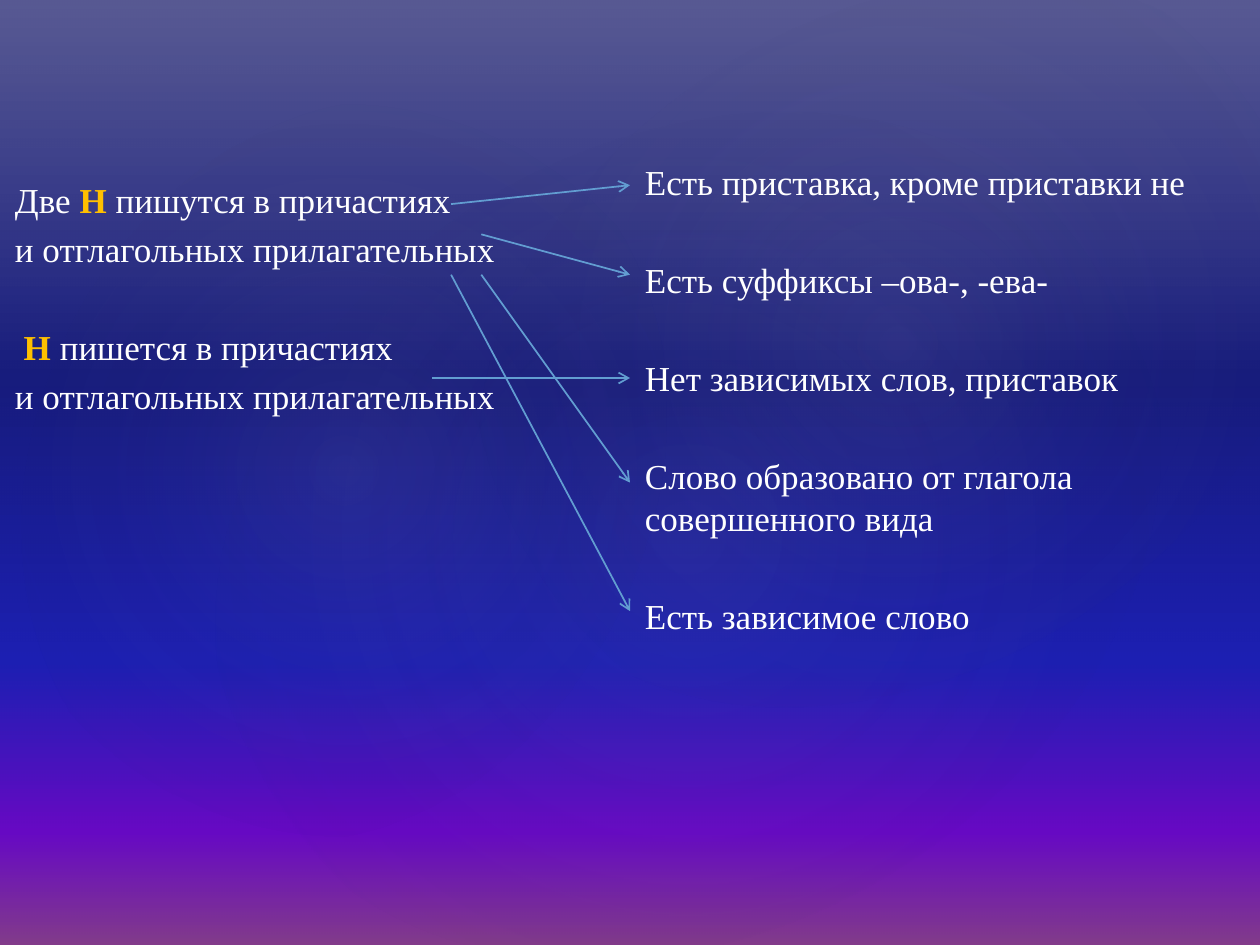
from dataclasses import dataclass
from typing import NamedTuple

import pptx
import pptx.dml.color
import pptx.enum.shapes
import pptx.enum.text
import pptx.oxml
import pptx.oxml.ns
import pptx.util
from pptx.util import Inches


@dataclass(frozen=True)
class Theme:
    font: str = "Times New Roman"
    size: int = 20
    near: int = 4
    far: int = 32
    text: str = "FFFFFF"
    mark: str = "FFC000"
    line: str = "629DD1"
    glow: str = "C4BCC6"
    deep: str = "242852"
    haze: str = "504652"


class Stop(NamedTuple):
    pos: int
    color: str
    alpha: int = 100


class Glow(NamedTuple):
    left: float
    top: float
    width: float
    height: float
    turn: float
    alpha: int


class Line(NamedTuple):
    text: str
    far: bool = False


class Block(NamedTuple):
    left: float
    top: float
    width: float
    height: float
    foot: float
    lines: list[Line]


class Arrow(NamedTuple):
    x: float
    y: float
    end: float


THEME = Theme()
TIP = 5
SKY = [Stop(0, "5C64B7"), Stop(40, "0A128C"), Stop(70, "181CC7"),
       Stop(88, "7005D4"), Stop(100, "8C3D91")]
VEIL = [Stop(0, THEME.haze, 36), Stop(100, THEME.deep, 10)]
GLOWS = [
    Glow(1.5, 1.14, 7.92, 6.24, 328.7, 7),
    Glow(-0.3, 1.28, 6.06, 4.9, 294.3, 8),
    Glow(3.58, 0.13, 7.09, 5.2, 328.7, 8),
]
BLOCKS = [
    Block(0, 0.6, 5.12, 4, 0.52, [
        Line("Две *Н *пишутся в причастиях"),
        Line("и отглагольных прилагательных"),
        Line(" *Н *пишется в причастиях", True),
        Line("и отглагольных прилагательных"),
    ]),
    Block(5, 0.76, 4.88, 4.81, 0.05, [
        Line("Есть приставка, кроме приставки не"),
        Line("Есть суффиксы –ова-, -ева-", True),
        Line("Нет зависимых слов, приставок", True),
        Line("Слово образовано от глагола совершенного вида", True),
        Line("Есть зависимое слово", True),
    ]),
]
ARROWS = [
    Arrow(3.58, 1.62, 1.47),
    Arrow(3.82, 1.86, 2.18),
    Arrow(3.82, 2.18, 3.83),
    Arrow(3.43, 3, 3),
    Arrow(3.58, 2.18, 4.85),
]


def rgb(code: str) -> pptx.dml.color.RGBColor:
    return pptx.dml.color.RGBColor.from_string(code)


def blend(owner, fill, stops: list[Stop], round: bool = False) -> None:
    fill.gradient()
    old = owner.xpath(".//a:gradFill")[0]
    marks = "".join(
        f'<a:gs pos="{s.pos * 1000}"><a:srgbClr val="{s.color}">'
        f'<a:alpha val="{s.alpha * 1000}"/></a:srgbClr></a:gs>'
        for s in stops)
    way = ('<a:path path="circle"><a:fillToRect l="50000" t="50000" '
           'r="50000" b="50000"/></a:path>'
           if round else '<a:lin ang="5400000" scaled="0"/>')
    new = pptx.oxml.parse_xml(
        f'<a:gradFill {pptx.oxml.ns.nsdecls("a")} rotWithShape="1">'
        f'<a:gsLst>{marks}</a:gsLst>{way}</a:gradFill>')
    old.getparent().replace(old, new)


def add_shade(slide, kind, box: tuple, stops: list[Stop],
              round: bool = False, turn: float = 0) -> None:
    shape = slide.shapes.add_shape(kind, *map(Inches, box))
    shape.shadow.inherit = False
    shape.line.fill.background()
    shape.rotation = turn
    blend(shape._element, shape.fill, stops, round)


def add_block(slide, block: Block) -> None:
    frame = slide.shapes.add_textbox(*map(Inches, block[:4])).text_frame
    frame.word_wrap = True
    frame.vertical_anchor = pptx.enum.text.MSO_ANCHOR.MIDDLE
    frame.margin_bottom = Inches(block.foot)
    for i, line in enumerate(block.lines):
        para = frame.add_paragraph() if i else frame.paragraphs[0]
        para._p.get_or_add_pPr().set("marL", str(Inches(0.02)))
        para.space_before = pptx.util.Pt(THEME.far if line.far else THEME.near)
        para.font.name = THEME.font
        para.font.size = pptx.util.Pt(THEME.size)
        para.font.color.rgb = rgb(THEME.text)
        for j, part in enumerate(line.text.split("*")):
            run = para.add_run()
            run.text = part
            if j % 2:
                run.font.bold = True
                run.font.color.rgb = rgb(THEME.mark)


def add_arrow(slide, arrow: Arrow) -> None:
    wire = slide.shapes.add_connector(
        pptx.enum.shapes.MSO_CONNECTOR.STRAIGHT,
        *map(Inches, (arrow.x, arrow.y, TIP, arrow.end)))
    wire.line.color.rgb = rgb(THEME.line)
    wire.line.width = pptx.util.Pt(1)
    space = pptx.oxml.ns.nsdecls("a")
    wire.line._get_or_add_ln().append(
        pptx.oxml.parse_xml(f'<a:tailEnd {space} type="arrow"/>'))
    wire._element.spPr.append(
        pptx.oxml.parse_xml(f"<a:effectLst {space}/>"))


def main() -> None:
    deck = pptx.Presentation()
    deck.slide_width, deck.slide_height = Inches(10), Inches(7.5)
    slide = deck.slides.add_slide(deck.slide_layouts[6])
    kinds = pptx.enum.shapes.MSO_SHAPE
    blend(slide._element, slide.background.fill, SKY)
    add_shade(slide, kinds.RECTANGLE, (0, 0, 10, 7.5), VEIL)
    for glow in GLOWS:
        stops = [Stop(0, THEME.glow, glow.alpha), Stop(58, THEME.deep, 0)]
        add_shade(slide, kinds.OVAL, glow[:4], stops, True, glow.turn)
    for block in BLOCKS:
        add_block(slide, block)
    for arrow in ARROWS:
        add_arrow(slide, arrow)
    deck.save("out.pptx")


if __name__ == "__main__":
    main()
